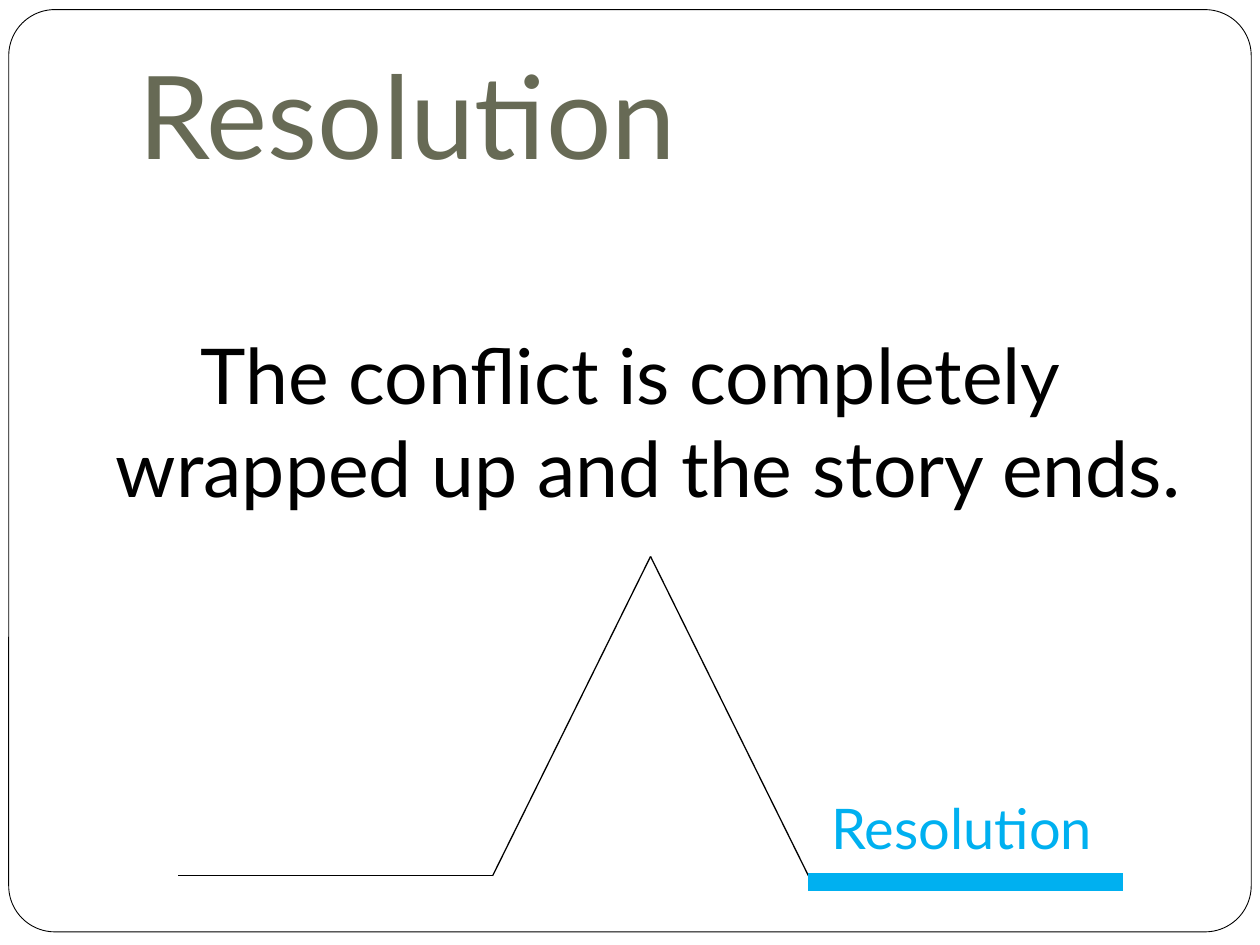
from itertools import pairwise

from lxml.etree import SubElement
from pptx import Presentation
from pptx.dml.color import RGBColor
from pptx.enum.shapes import MSO_CONNECTOR as Connector, MSO_SHAPE as Shape
from pptx.enum.text import MSO_ANCHOR as Anchor, PP_ALIGN as Align
from pptx.oxml.ns import qn
from pptx.util import Pt

FONT = "Lato"
COLORS = {
    "paper": "FFFFFF",
    "ink": "000000",
    "title": "676A55",
    "accent": "00B0F0",
}


def color(name):
    return RGBColor.from_string(COLORS[name])


def add_frame(page, left, top, width, height):
    frame = page.shapes.add_shape(
        Shape.ROUNDED_RECTANGLE, Pt(left), Pt(top), Pt(width), Pt(height))
    frame.adjustments[0] = 0.05
    frame.shadow.inherit = False
    frame.fill.solid()
    frame.fill.fore_color.rgb = color("paper")
    frame.line.color.rgb = color("ink")
    frame.line.width = Pt(0.5)


def add_text(page, text, left, top, width, height, size, ink,
             anchor=Anchor.TOP, wrap=True):
    box = page.shapes.add_textbox(Pt(left), Pt(top), Pt(width), Pt(height))
    frame = box.text_frame
    frame.word_wrap = wrap
    frame.vertical_anchor = anchor
    frame.text = text
    font = frame.paragraphs[0].runs[0].font
    font.name = FONT
    font.size = Pt(size)
    font.color.rgb = color(ink)
    return frame


def set_hanging_indent(para, indent):
    properties = para._p.get_or_add_pPr()
    properties.set("marL", str(Pt(indent)))
    properties.set("indent", str(-Pt(indent)))


def add_line(page, start, end, ink, width):
    line = page.shapes.add_connector(
        Connector.STRAIGHT, *(Pt(value) for value in start + end))
    line.line.color.rgb = color(ink)
    line.line.width = Pt(width)
    SubElement(line._element.spPr, qn("a:effectLst"))


def main():
    deck = Presentation()
    deck.slide_width, deck.slide_height = Pt(720), Pt(540)
    page = deck.slides.add_slide(deck.slide_layouts[6])

    add_frame(page, 5, 5.5, 710, 527)

    title = add_text(page, "Resolution", 72, 21.6, 612, 90, 66, "title", Anchor.BOTTOM)
    title.margin_bottom = Pt(7.2)

    body = add_text(page, "The conflict is completely wrapped up and the story ends.",
                    36, 126, 648, 228, 44, "ink", Anchor.MIDDLE)
    para = body.paragraphs[0]
    para.alignment = Align.CENTER
    para.space_before = Pt(5.8)
    set_hanging_indent(para, 21.6)

    base, peak = 500.5, 318
    plot = [(102, base), (281.5, base), (371.75, peak), (462, base), (641.5, base)]
    for start, end in pairwise(plot):
        add_line(page, start, end, "ink", 0.75)
    add_line(page, (462, 504), (642, 504), "accent", 10)

    add_text(page, "Resolution", 468, 450, 167, 46, 32, "accent", wrap=False)

    deck.save("out.pptx")


if __name__ == "__main__":
    main()
